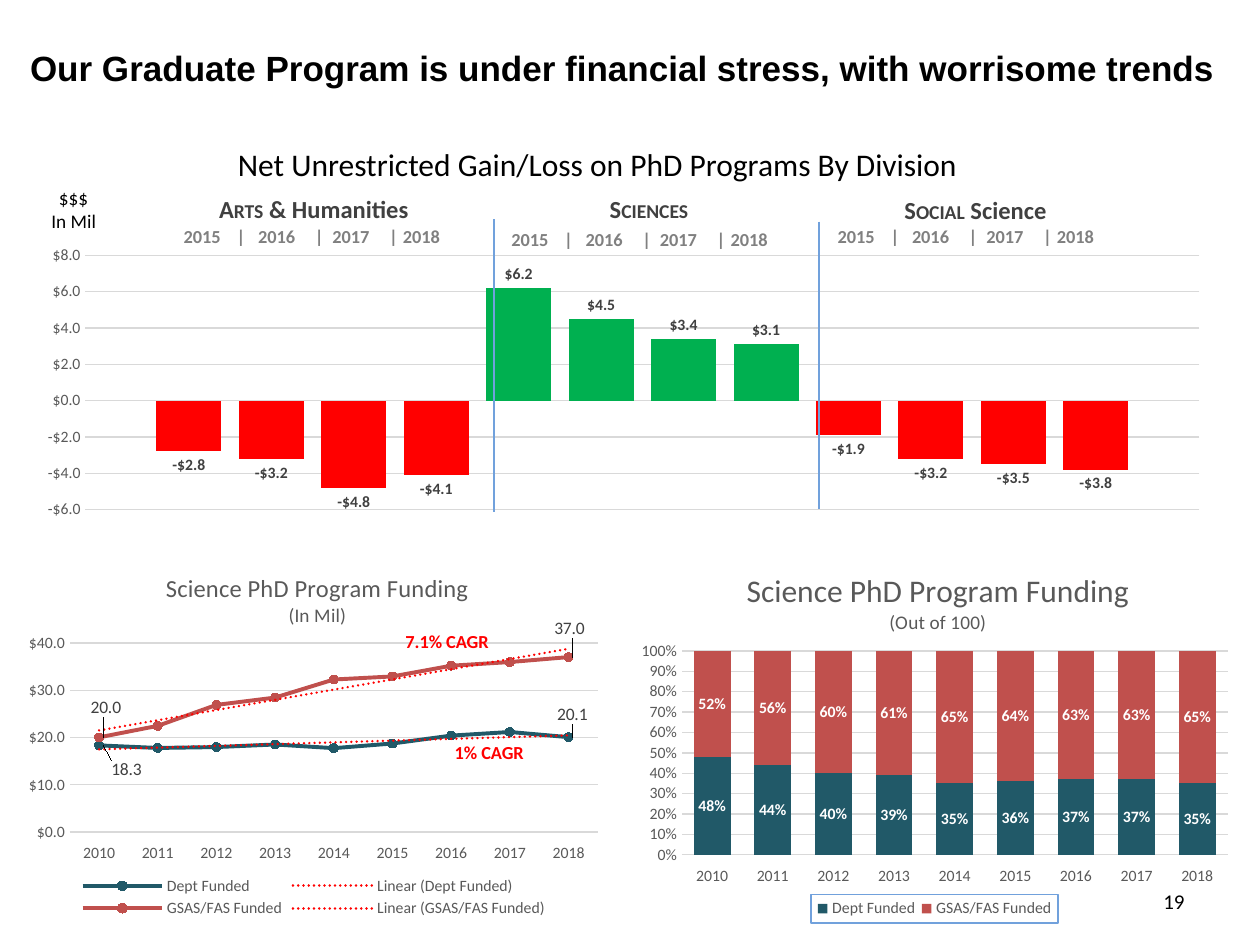
from pptx import Presentation
from pptx.chart.data import CategoryChartData
from pptx.dml.color import RGBColor
from pptx.enum import chart as ch, dml, shapes, text
from pptx.oxml import parse_xml
from pptx.oxml.ns import nsdecls
from pptx.util import Inches, Pt

BLACK = RGBColor(0, 0, 0)
WHITE = RGBColor(0xFF, 0xFF, 0xFF)
DARK = RGBColor(0x40, 0x40, 0x40)
SLATE = RGBColor(0x59, 0x59, 0x59)
GRAY = RGBColor(0x80, 0x80, 0x80)
GRID = RGBColor(0xD9, 0xD9, 0xD9)
BLUE = RGBColor(0x71, 0xA1, 0xDC)
TEAL = RGBColor(0x21, 0x59, 0x68)
BRICK = RGBColor(0xC0, 0x50, 0x4D)
RED = RGBColor(0xFF, 0, 0)
GREEN = RGBColor(0, 0xB0, 0x50)

DOLLARS = '"$"#,##0.0'
FUNDING_YEARS = [str(y) for y in range(2010, 2019)]
TAB_STOPS = (0.42, 0.59, 1.04, 1.18, 1.63, 1.74)


def set_font(font, size, color, bold=False, name="Calibri"):
    font.size, font.bold, font.name = Pt(size), bold, name
    font.color.rgb = color


def add_text(s, box, lines, size, color=BLACK, bold=False, name="Calibri",
             align=None, anchor=text.MSO_ANCHOR.TOP, wrap=True, tabs=()):
    """Each line is a string or a list of (string, small caps) runs."""
    tf = s.shapes.add_textbox(*map(Inches, box)).text_frame
    tf.word_wrap, tf.vertical_anchor = wrap, anchor
    for i, line in enumerate(lines):
        p = tf.paragraphs[0] if i == 0 else tf.add_paragraph()
        p.alignment = align
        if tabs:
            stops = "".join(f'<a:tab pos="{Inches(t)}" algn="l"/>' for t in tabs)
            p._p.get_or_add_pPr().append(
                parse_xml(f'<a:tabLst {nsdecls("a")}>{stops}</a:tabLst>'))
        for words, small in [(line, False)] if isinstance(line, str) else line:
            r = p.add_run()
            r.text = words
            set_font(r.font, size, color, bold, name)
            if small:
                r._r.get_or_add_rPr().set("cap", "small")


def add_divider(s, x, top, bottom):
    line = s.shapes.add_connector(shapes.MSO_CONNECTOR.STRAIGHT,
                                  Inches(x), Inches(top), Inches(x), Inches(bottom))
    line.line.color.rgb, line.line.width = BLUE, Pt(0.75)
    line._element.spPr.append(parse_xml(f'<a:effectLst {nsdecls("a")}/>'))


def set_layout(element, index, inner=False, edge=True, **place):
    """Fix a chart part's place, as fractions of the chart."""
    for old in element.xpath("./c:layout"):
        element.remove(old)
    parts = '<c:layoutTarget val="inner"/>' if inner else ""
    if edge:
        parts += '<c:xMode val="edge"/><c:yMode val="edge"/>'
    parts += "".join(f'<c:{k} val="{v}"/>' for k, v in place.items())
    element.insert(index, parse_xml(
        f'<c:layout {nsdecls("c")}><c:manualLayout>{parts}</c:manualLayout></c:layout>'))


def add_chart(s, box, kind, categories, series, number_format, plot):
    data = CategoryChartData()
    data.categories = categories
    for name, values in series:
        data.add_series(name, values)
    chart = s.shapes.add_chart(kind, *map(Inches, box), data).chart
    set_font(chart.font, 10, BLACK)
    chart.has_title = chart.has_legend = False
    cat, val = chart.category_axis, chart.value_axis
    for axis in (cat, val):
        axis.major_tick_mark = axis.minor_tick_mark = ch.XL_TICK_MARK.NONE
        set_font(axis.tick_labels.font, 9, SLATE)
    cat.tick_label_position = ch.XL_TICK_LABEL_POSITION.LOW
    cat.format.line.color.rgb = GRID
    val.format.line.fill.background()
    val.has_major_gridlines = True
    grid = val.major_gridlines.format.line
    grid.color.rgb, grid.width = GRID, Pt(0.75)
    val.tick_labels.number_format = number_format
    val.tick_labels.number_format_is_linked = False
    set_layout(chart._chartSpace.chart.plotArea, 0, inner=True, **dict(zip("xywh", plot)))
    return chart


def add_title_legend(chart, lines, title_xy, legend_box):
    tf = chart.chart_title.text_frame
    for i, (words, size) in enumerate(lines):
        p = tf.paragraphs[0] if i == 0 else tf.add_paragraph()
        r = p.add_run()
        r.text = words
        set_font(r.font, size, SLATE)
    set_layout(chart.chart_title._element, 1, **dict(zip("xy", title_xy)))
    chart.has_legend = True
    chart.legend.position = ch.XL_LEGEND_POSITION.BOTTOM
    chart.legend.include_in_layout = False
    set_font(chart.legend.font, 9, SLATE)
    set_layout(chart.legend._element, 1, **dict(zip("xywh", legend_box)))


def label_series(ser, position, size, color, number_format):
    labels = ser.data_labels
    labels.show_value, labels.position = True, position
    labels.number_format, labels.number_format_is_linked = number_format, False
    set_font(labels.font, size, color, True)


def fill_bar(ser, color):
    ser.invert_if_negative = False
    ser.format.fill.solid()
    ser.format.fill.fore_color.rgb = color


def division_chart(s, box):
    values = [-2.8, -3.2, -4.8, -4.1, 6.2, 4.5, 3.4, 3.1, -1.9, -3.2, -3.5, -3.8]
    series = [(f"Series {i}", [v]) for i, v in enumerate(values, 1)]
    chart = add_chart(s, box, ch.XL_CHART_TYPE.COLUMN_CLUSTERED, ["1"], series,
                      DOLLARS, (0.026, 0.143, 0.962, 0.807))
    chart.category_axis.visible = False
    axis = chart.value_axis
    axis.minimum_scale, axis.maximum_scale, axis.major_unit = -6, 8, 2
    plot = chart.plots[0]
    plot.vary_by_categories, plot.gap_width, plot.overlap = False, 219, -27
    for ser, value in zip(plot.series, values):
        fill_bar(ser, GREEN if value > 0 else RED)
        label_series(ser, ch.XL_LABEL_POSITION.OUTSIDE_END, 9, DARK, DOLLARS)


def add_trend(ser):
    ser._element.xpath("./c:cat")[0].addprevious(parse_xml(
        f'<c:trendline {nsdecls("c", "a")}><c:spPr><a:ln w="{Pt(1.5)}" cap="rnd">'
        f'<a:solidFill><a:srgbClr val="{RED}"/></a:solidFill><a:prstDash val="sysDot"/>'
        '</a:ln></c:spPr><c:trendlineType val="linear"/><c:dispRSqr val="0"/>'
        '<c:dispEq val="0"/></c:trendline>'))


def label_point(ser, index, dx, dy):
    label = ser.points[index].data_label
    set_font(label.font, 10, DARK)
    label.position = ch.XL_LABEL_POSITION.RIGHT
    dlbl = ser._element.xpath(f"./c:dLbls/c:dLbl[c:idx/@val='{index}']")[0]
    set_layout(dlbl, 1, edge=False, x=dx, y=dy)
    dlbl.insert(2, parse_xml(
        f'<c:numFmt {nsdecls("c")} formatCode="0.0" sourceLinked="0"/>'))


def funding_chart(s, box):
    series = [("Dept Funded", [18.33, 17.78, 17.97, 18.51, 17.74, 18.72, 20.39, 21.17, 20.07]),
              ("GSAS/FAS Funded", [20.03, 22.47, 26.9, 28.46, 32.28, 32.93, 35.2, 35.97, 37.02])]
    chart = add_chart(s, box, ch.XL_CHART_TYPE.LINE_MARKERS, FUNDING_YEARS, series,
                      DOLLARS, (0.088, 0.258, 0.892, 0.5))
    add_title_legend(chart, [("Science PhD Program Funding", 14), ("(In Mil)", 11)],
                     (0.244, 0.057), (0.1, 0.865, 0.8, 0.13))
    axis = chart.value_axis
    axis.minimum_scale, axis.maximum_scale, axis.major_unit = 0, 40, 10
    offsets = [{0: (0.005, 0.065), 8: (-0.035, -0.06)},
               {0: (-0.03, -0.08), 8: (-0.04, -0.075)}]
    for ser, color, points in zip(chart.plots[0].series, (TEAL, BRICK), offsets):
        ser.smooth = False
        ser.format.line.color.rgb, ser.format.line.width = color, Pt(2.25)
        ser.marker.style, ser.marker.size = ch.XL_MARKER_STYLE.CIRCLE, 5
        ser.marker.format.fill.solid()
        ser.marker.format.fill.fore_color.rgb = color
        ser.marker.format.line.color.rgb = color
        ser.data_labels.show_value = False
        for index, (dx, dy) in points.items():
            label_point(ser, index, dx, dy)
        add_trend(ser)


def share_chart(s, box):
    dept = [0.48, 0.44, 0.4, 0.39, 0.35, 0.36, 0.37, 0.37, 0.35]
    series = [("Dept Funded", dept), ("GSAS/FAS Funded", [round(1 - d, 2) for d in dept])]
    chart = add_chart(s, box, ch.XL_CHART_TYPE.COLUMN_STACKED_100, FUNDING_YEARS, series,
                      "0%", (0.085, 0.279, 0.895, 0.54))
    add_title_legend(chart, [("Science PhD Program Funding", 18), ("(Out of 100)", 11)],
                     (0.185, 0.055), (0.297, 0.924, 0.405, 0.075))
    chart.legend._element.xpath("./c:txPr")[0].addprevious(parse_xml(
        f'<c:spPr {nsdecls("c", "a")}><a:ln w="{Pt(0.75)}"><a:solidFill>'
        f'<a:srgbClr val="{BLUE}"/></a:solidFill></a:ln></c:spPr>'))
    chart.value_axis.major_unit = 0.1
    plot = chart.plots[0]
    plot.vary_by_categories, plot.gap_width, plot.overlap = False, 65, 100
    for ser, color in zip(plot.series, (TEAL, BRICK)):
        fill_bar(ser, color)
        label_series(ser, ch.XL_LABEL_POSITION.CENTER, 9, WHITE, "0%")


def division_heading(s, name_box, runs, years_xy):
    add_text(s, name_box, [runs], 14, DARK, True)
    add_text(s, (*years_xy, 2.53, 0.28), ["2015\t|\t2016\t|\t2017\t|\t2018"],
             10.5, GRAY, True, tabs=TAB_STOPS)


def main():
    prs = Presentation()
    prs.slide_width, prs.slide_height = Inches(10), Inches(7.5)
    s = prs.slides.add_slide(prs.slide_layouts[6])
    middle = text.MSO_ANCHOR.MIDDLE

    # Title and page number
    add_text(s, (0.14, 0.18, 9.64, 0.71),
             ["Our Graduate Program is under financial stress, with worrisome trends"],
             20, bold=True, name="Arial", anchor=middle)
    add_text(s, (7.17, 6.95, 2.33, 0.4), ["19"], 12, align=text.PP_ALIGN.RIGHT, anchor=middle)

    # Charts
    funding_chart(s, (0.14, 4.33, 4.7, 3))
    share_chart(s, (5, 4.33, 4.84, 3))
    division_chart(s, (0.38, 1.67, 9.25, 2.5))

    # Division headings and dividers
    add_text(s, (1.79, 1.1, 6.63, 0.4),
             ["Net Unrestricted Gain/Loss on PhD Programs By Division"], 18, wrap=False)
    add_text(s, (0.3, 1.43, 0.57, 0.47), ["$$$", "In Mil"], 11,
             align=text.PP_ALIGN.CENTER, wrap=False)
    division_heading(s, (1.64, 1.49, 2, 0.34),
                     [("Arts", True), (" & Humanities", False)], (1.36, 1.74))
    division_heading(s, (4.74, 1.49, 1.08, 0.34), [("Sciences", True)], (3.96, 1.76))
    division_heading(s, (7.08, 1.5, 1.8, 0.34),
                     [("Social", True), (" Science", False)], (6.55, 1.74))
    add_divider(s, 3.92, 1.74, 4.06)
    add_divider(s, 6.5, 1.76, 4.04)

    # Growth rates
    add_text(s, (3.12, 4.95, 1.04, 0.29), ["7.1% CAGR"], 10.5, RED, True, wrap=False)
    add_text(s, (3.51, 5.83, 0.89, 0.28), ["1% CAGR"], 10.5, RED, True, wrap=False)
    prs.save("out.pptx")


if __name__ == "__main__":
    main()
